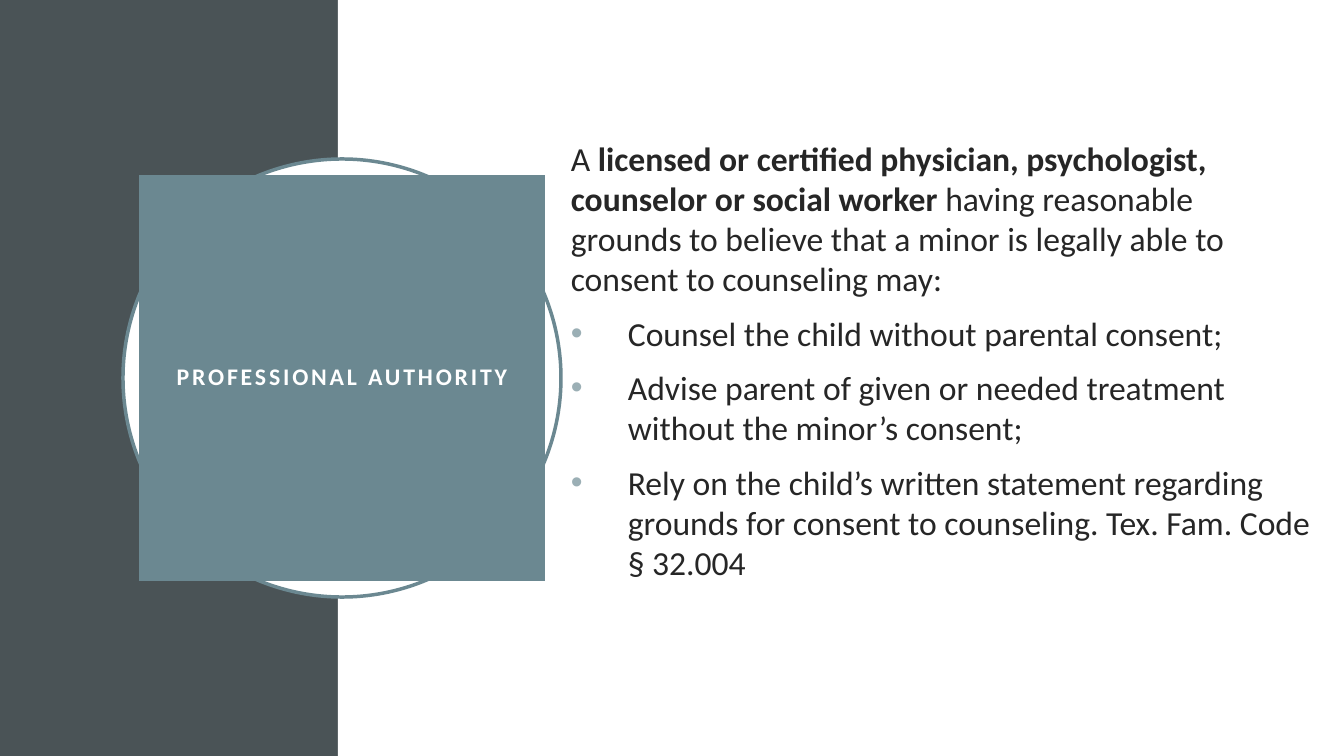
from dataclasses import dataclass

import pptx
import pptx.dml.color
import pptx.enum.shapes
import pptx.enum.text
import pptx.oxml.ns
import pptx.util
from lxml import etree

EMU_PER_PX = 914400 / 100.8
FONT = "Calibri"
COLORS = {
    "slate": "4A5356",
    "teal": "6B8891",
    "mist": "9BAFB5",
    "white": "FFFFFF",
    "ink": "262626",
}
SHAPES = pptx.enum.shapes.MSO_SHAPE


@dataclass
class Panel:
    left: int
    top: int
    width: int
    height: int
    fill: str
    shape: SHAPES = SHAPES.RECTANGLE
    outline: str = ""


PANELS = [
    Panel(0, 0, 338, 756, "slate"),
    Panel(338, 0, 1006, 756, "white"),
    Panel(123, 159, 438, 438, "white", SHAPES.OVAL, "teal"),
]
TITLE_PANEL = Panel(139, 175, 406, 406, "teal")

INTRO = [
    ("A ", False),
    ("licensed or certified physician, psychologist, counselor or social worker ", True),
    ("having reasonable grounds to believe that a minor is legally able to "
     "consent to counseling may:", False),
]
PERMITTED_ACTIONS = [
    "Counsel the child without parental consent;",
    "Advise parent of given or needed treatment without the minor’s consent;",
    "Rely on the child’s written statement regarding grounds for consent to "
    "counseling. Tex. Fam. Code § 32.004",
]


def px(length: int) -> int:
    return round(length * EMU_PER_PX)


def color(name: str) -> pptx.dml.color.RGBColor:
    return pptx.dml.color.RGBColor.from_string(COLORS[name])


def draw_panel(slide, panel: Panel):
    shape = slide.shapes.add_shape(
        panel.shape, px(panel.left), px(panel.top), px(panel.width), px(panel.height))
    shape.shadow.inherit = False
    shape.fill.solid()
    shape.fill.fore_color.rgb = color(panel.fill)
    if panel.outline:
        shape.line.color.rgb = color(panel.outline)
        shape.line.width = pptx.util.Pt(2.5)
    else:
        shape.line.fill.background()
    return shape


def set_font(paragraph, size: int, color_name: str) -> None:
    paragraph.font.name = FONT
    paragraph.font.size = pptx.util.Pt(size)
    paragraph.font.color.rgb = color(color_name)


def add_bullet(paragraph, indent: int) -> None:
    properties = paragraph._p.get_or_add_pPr()
    properties.set("marL", str(px(indent)))
    properties.set("indent", str(-px(indent)))
    qn = pptx.oxml.ns.qn
    bullet_color = etree.SubElement(properties, qn("a:buClr"))
    etree.SubElement(bullet_color, qn("a:srgbClr"), val=COLORS["mist"])
    etree.SubElement(properties, qn("a:buFont"), typeface="Arial")
    etree.SubElement(properties, qn("a:buChar"), char="•")


def write_title(shape) -> None:
    frame = shape.text_frame
    frame.word_wrap = True
    frame.vertical_anchor = pptx.enum.text.MSO_ANCHOR.MIDDLE
    frame.margin_left = frame.margin_right = px(20)
    frame.margin_top = frame.margin_bottom = px(20)
    title = frame.paragraphs[0]
    title.alignment = pptx.enum.text.PP_ALIGN.CENTER
    title.line_spacing = 0.9
    set_font(title, 17, "white")
    title.font.bold = True
    run = title.add_run()
    run.text = "PROFESSIONAL AUTHORITY"
    run.font._element.set("spc", "200")


def write_body(slide) -> None:
    box = slide.shapes.add_textbox(px(561), px(10), px(759), px(700))
    frame = box.text_frame
    frame.word_wrap = True
    frame.vertical_anchor = pptx.enum.text.MSO_ANCHOR.MIDDLE
    intro = frame.paragraphs[0]
    set_font(intro, 24, "ink")
    for text, bold in INTRO:
        run = intro.add_run()
        run.text = text
        run.font.bold = bold
    for text in PERMITTED_ACTIONS:
        action = frame.add_paragraph()
        action.text = text
        action.space_before = pptx.util.Pt(10)
        add_bullet(action, 57)
        set_font(action, 24, "ink")


def main() -> None:
    presentation = pptx.Presentation()
    presentation.slide_width = px(1344)
    presentation.slide_height = px(756)
    slide = presentation.slides.add_slide(presentation.slide_layouts[6])

    # Background halves and ring
    for panel in PANELS:
        draw_panel(slide, panel)

    # Title and body text
    write_title(draw_panel(slide, TITLE_PANEL))
    write_body(slide)

    presentation.save("out.pptx")


if __name__ == "__main__":
    main()
